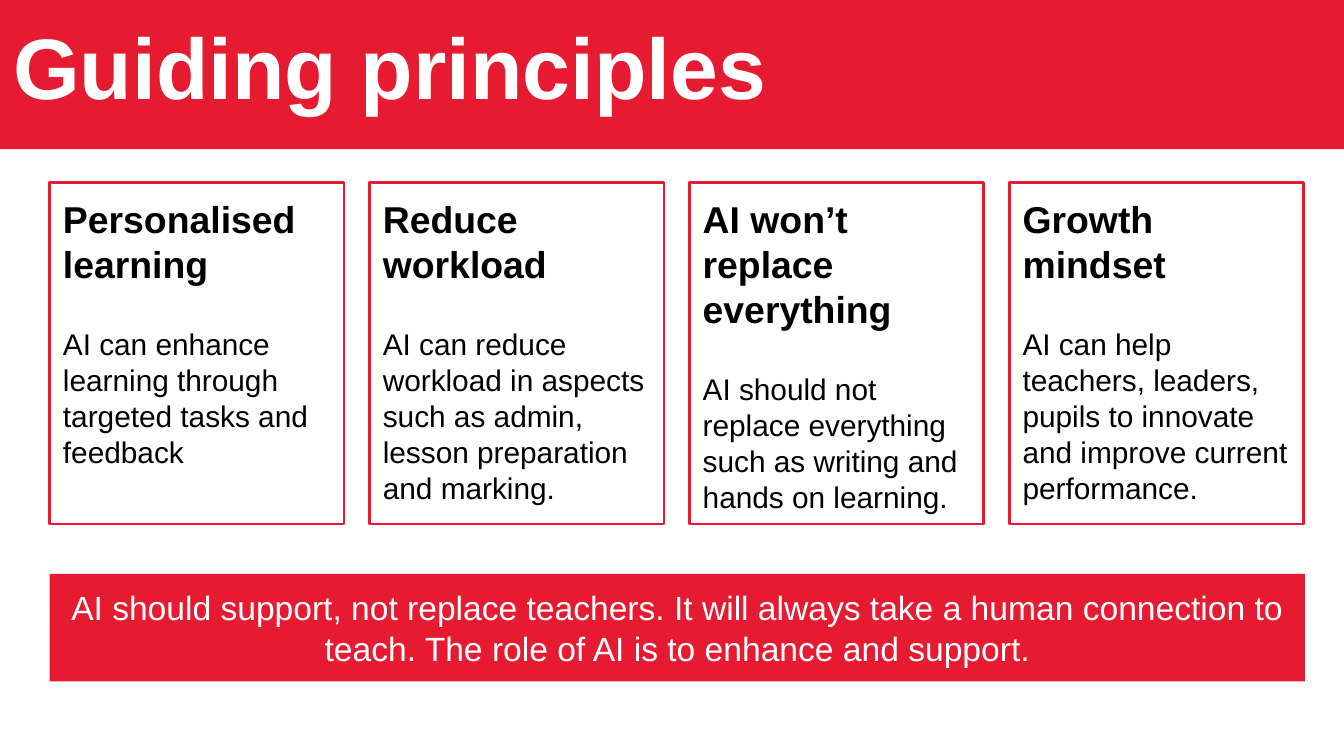
from pptx import Presentation
from pptx.dml.color import RGBColor
from pptx.enum.shapes import MSO_SHAPE
from pptx.enum.text import MSO_ANCHOR as Anchor, PP_ALIGN as Align
from pptx.util import Inches, Pt

RED, BLACK, WHITE = "E61B31", "000000", "FFFFFF"
LEFT, CARD_WIDTH, CARD_STEP = 0.37, 2.19, 2.38
CARDS = [
    ("Personalised learning",
     "AI can enhance learning through targeted tasks and feedback"),
    ("Reduce workload",
     "AI can reduce workload in aspects such as admin, lesson preparation and marking."),
    ("AI won’t replace everything",
     "AI should not replace everything such as writing and hands on learning."),
    ("Growth mindset",
     "AI can help teachers, leaders, pupils to innovate and improve current performance."),
]

# A 16:9 page
deck = Presentation()
deck.slide_width, deck.slide_height = Inches(10), Inches(10 * 9 / 16)
page = deck.slides.add_slide(deck.slide_layouts[6])


def add_box(left, top, width, height, filled, anchor):
    box = page.shapes.add_shape(MSO_SHAPE.RECTANGLE, Inches(left), Inches(top),
                                Inches(width), Inches(height))
    box.shadow.inherit = False
    if filled:
        box.fill.solid()
        box.fill.fore_color.rgb = RGBColor.from_string(RED)
        box.line.fill.background()
    else:
        box.fill.background()
        box.line.color.rgb = RGBColor.from_string(RED)
        box.line.width = Pt(1.5)
    frame = box.text_frame
    frame.word_wrap = True
    frame.vertical_anchor = anchor
    frame.margin_left = frame.margin_right = Inches(0.1)
    frame.margin_top = frame.margin_bottom = Inches(0.1)
    return frame


def write(para, text, size, color, bold=False, align=Align.LEFT):
    para.text = text
    para.alignment = align
    para.font.name = "Arial"
    para.font.size = Pt(size)
    para.font.bold = bold
    para.font.color.rgb = RGBColor.from_string(color)


# Title band
title = add_box(0, 0, 10, 1.11, True, Anchor.TOP)
write(title.paragraphs[0], "Guiding principles", 46, WHITE, bold=True)

# Four principle cards
for index, (heading, detail) in enumerate(CARDS):
    card = add_box(LEFT + index * CARD_STEP, 1.36, CARD_WIDTH, 2.54, False, Anchor.TOP)
    write(card.paragraphs[0], heading, 20, BLACK, bold=True)
    body = card.add_paragraph()
    write(body, detail, 16, BLACK)
    body.space_before = Pt(21.5)

# Closing message
message = add_box(LEFT, 4.27, 9.34, 0.8, True, Anchor.MIDDLE)
write(message.paragraphs[0],
      "AI should support, not replace teachers. It will always take a human "
      "connection to teach. The role of AI is to enhance and support.",
      18, WHITE, align=Align.CENTER)

deck.save("out.pptx")
